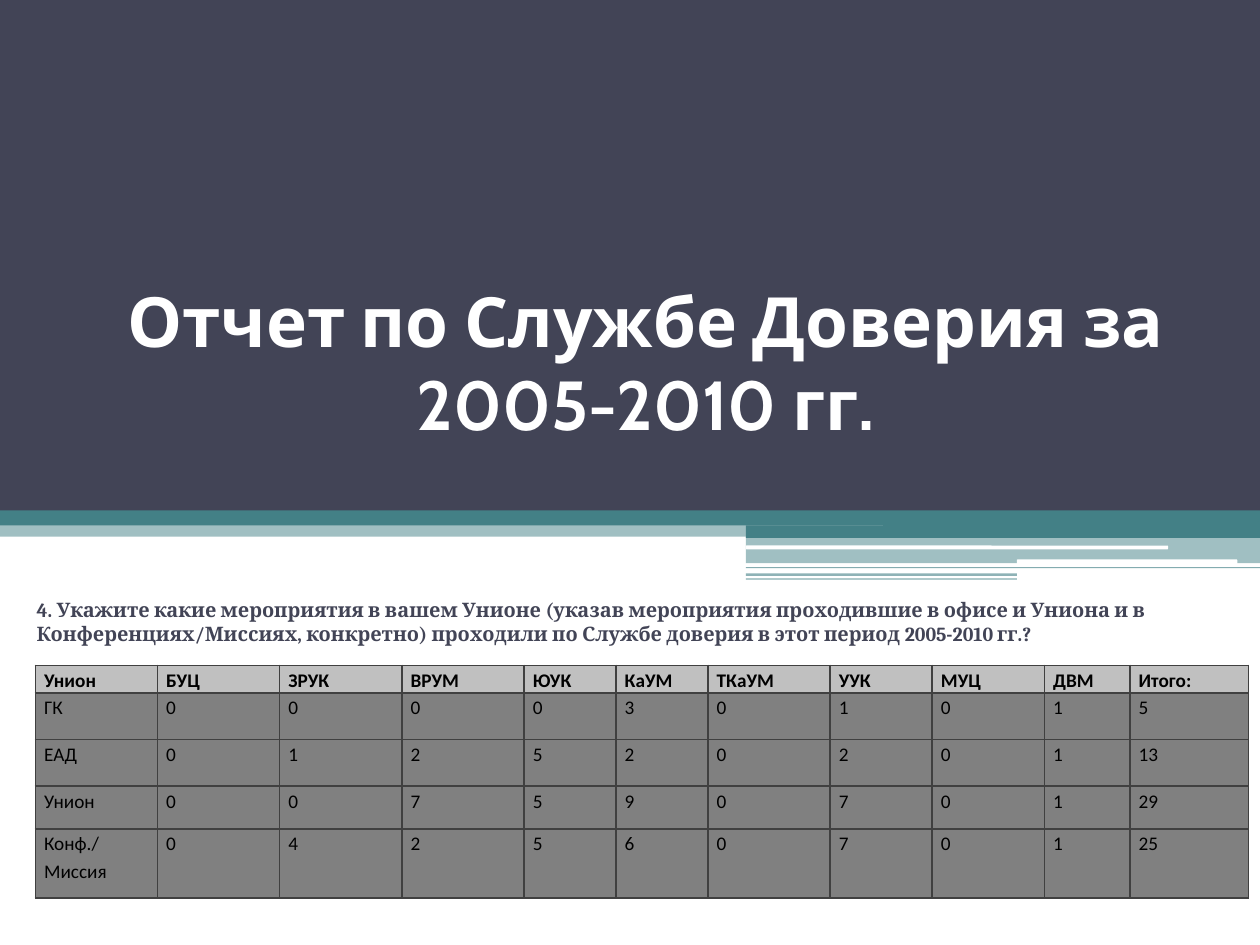
from pptx import Presentation, util as u
from pptx.dml.color import RGBColor
from pptx.enum import shapes, text
from pptx.oxml import parse_xml
from pptx.oxml.ns import nsdecls, qn
from lxml import etree

HUES = {"dark": "424456", "teal": "438086", "white": "FFFFFF", "black": "000000",
        "head": "C0C0C0", "body": "808080", "edge": "404040"}

# The slide is a grid of 100 columns by 75 rows
COLS, ROWS = 100, 75
WIDE, HIGH = u.Inches(10), u.Inches(7.5)

# Name, left, top, width, height, hue, opacity in percent
BANDS = [
    ("rect", 59.2, 41.7, 40.8, 1, "teal", 100),
    ("rect", 59.2, 42.6, 40.8, 2.1, "teal", 50),
    ("rect", 59.2, 45, 40.8, 0.1, "teal", 65),
    ("rect", 59.2, 45.5, 21.5, 0.2, "teal", 60),
    ("rect", 59.2, 45.9, 21.5, 0.1, "teal", 65),
    ("round", 59.2, 43.3, 33.5, 0.3, "white", 100),
    ("round", 80.7, 44.4, 17.5, 0.4, "white", 100),
    ("rect", 0, 39.9, 100, 2.7, "teal", 50),
    ("rect", 0, 40.2, 100, 1.5, "teal", 100),
    ("rect", 70.1, 39.8, 29.9, 2.7, "teal", 100),
    ("rect", 0, 0, 100, 40.5, "dark", 100),
]
KINDS = {"rect": shapes.MSO_SHAPE.RECTANGLE,
         "round": shapes.MSO_SHAPE.ROUNDED_RECTANGLE}

TITLE = "Отчет по Службе Доверия за 2005-2010 гг."
ASK = ("4. Укажите какие мероприятия в вашем Унионе (указав мероприятия "
       "проходившие в офисе и Униона и в Конференциях/Миссиях, конкретно) "
       "проходили по Службе доверия в этот период 2005-2010 гг.?")

DATA = [
    "Унион БУЦ ЗРУК ВРУМ ЮУК КаУМ ТКаУМ УУК МУЦ ДВМ Итого:".split(),
    ["ГК", 0, 0, 0, 0, 3, 0, 1, 0, 1, 5],
    ["ЕАД", 0, 1, 2, 5, 2, 0, 2, 0, 1, 13],
    ["Унион", 0, 0, 7, 5, 9, 0, 7, 0, 1, 29],
    ["Конф./\nМиссия", 0, 4, 2, 5, 6, 0, 7, 0, 1, 25],
]
WIDTHS = [9.7, 9.7, 9.7, 9.7, 7.3, 7.3, 9.7, 8.1, 8.9, 6.8, 9.4]
HEIGHTS = [2.2, 3.7, 3.7, 3.4, 5.5]


def across(n):
    return round(WIDE * n / COLS)


def down(n):
    return round(HIGH * n / ROWS)


def box(x, y, w, h):
    return across(x), down(y), across(w), down(h)


def hue(name):
    return RGBColor.from_string(HUES[name])


def apply(item, **form):
    for key, value in form.items():
        setattr(item, key, value)


def style(para, face, size, ink, bold):
    apply(para.font, name=face, size=u.Pt(size), bold=bold)
    para.font.color.rgb = hue(ink)


def band(slide, kind, x, y, w, h, ink, solid):
    shape = slide.shapes.add_shape(KINDS[kind], *box(x, y, w, h))
    shape.shadow.inherit = False
    shape.line.fill.background()
    shape.fill.solid()
    shape.fill.fore_color.rgb = hue(ink)
    if solid < 100:
        tint = shape.fill._xPr.find(".//" + qn("a:srgbClr"))
        etree.SubElement(tint, qn("a:alpha"), val=str(solid * 1000))


def fill_in(holder, words, place, frame, para, font):
    left, top, width, height = box(*place)
    apply(holder, left=left, top=top, width=width, height=height)
    body = holder.text_frame
    body.text = words
    apply(body, word_wrap=True, auto_size=text.MSO_AUTO_SIZE.NONE, **frame)
    apply(body.paragraphs[0], space_before=u.Pt(0), **para)
    style(body.paragraphs[0], *font)
    # Bring the text in front of the bands
    tree = holder._element.getparent()
    tree.append(holder._element)


def border(cell):
    props = cell._tc.get_or_add_tcPr()
    for spot, side in enumerate("LRTB"):
        props.insert(spot, parse_xml(
            f'<a:ln{side} {nsdecls("a")} w="12700"><a:solidFill>'
            f'<a:srgbClr val="{HUES["edge"]}"/></a:solidFill></a:ln{side}>'))


def grid(slide, x, y):
    place = box(x, y, sum(WIDTHS), sum(HEIGHTS))
    table = slide.shapes.add_table(len(DATA), len(WIDTHS), *place).table
    for col, width in zip(table.columns, WIDTHS):
        col.width = across(width)
    for r, (row, height) in enumerate(zip(DATA, HEIGHTS)):
        table.rows[r].height = down(height)
        for c, value in enumerate(row):
            cell = table.cell(r, c)
            cell.text = str(value)
            apply(cell, margin_left=across(0.7), margin_right=across(0.7),
                  margin_top=0, margin_bottom=0)
            cell.fill.solid()
            cell.fill.fore_color.rgb = hue("body" if r else "head")
            border(cell)
            for para in cell.text_frame.paragraphs:
                para.line_spacing = 1.15
                style(para, "Calibri", 11, "black", r == 0)


def main():
    deck = Presentation()
    apply(deck, slide_width=WIDE, slide_height=HIGH)
    slide = deck.slides.add_slide(deck.slide_layouts[0])

    # Header block and its stripes
    for item in BANDS:
        band(slide, *item)

    # Question and title
    fill_in(slide.placeholders[1], ASK, (1.2, 44.6, 98.8, 7.9),
            {"vertical_anchor": text.MSO_ANCHOR.TOP,
             "margin_left": across(1.7), "margin_top": down(2.8)},
            {"alignment": text.PP_ALIGN.LEFT},
            ("Cambria", 11.4, "dark", True))
    fill_in(slide.shapes.title, TITLE, (5, 26.3, 92.5, 16.1),
            {"vertical_anchor": text.MSO_ANCHOR.BOTTOM,
             "margin_bottom": down(7.1)},
            {"alignment": text.PP_ALIGN.CENTER},
            ("Cabin", 39.6, "white", True))

    # Table of events
    grid(slide, 2.8, 52.8)
    deck.save("out.pptx")


if __name__ == "__main__":
    main()
